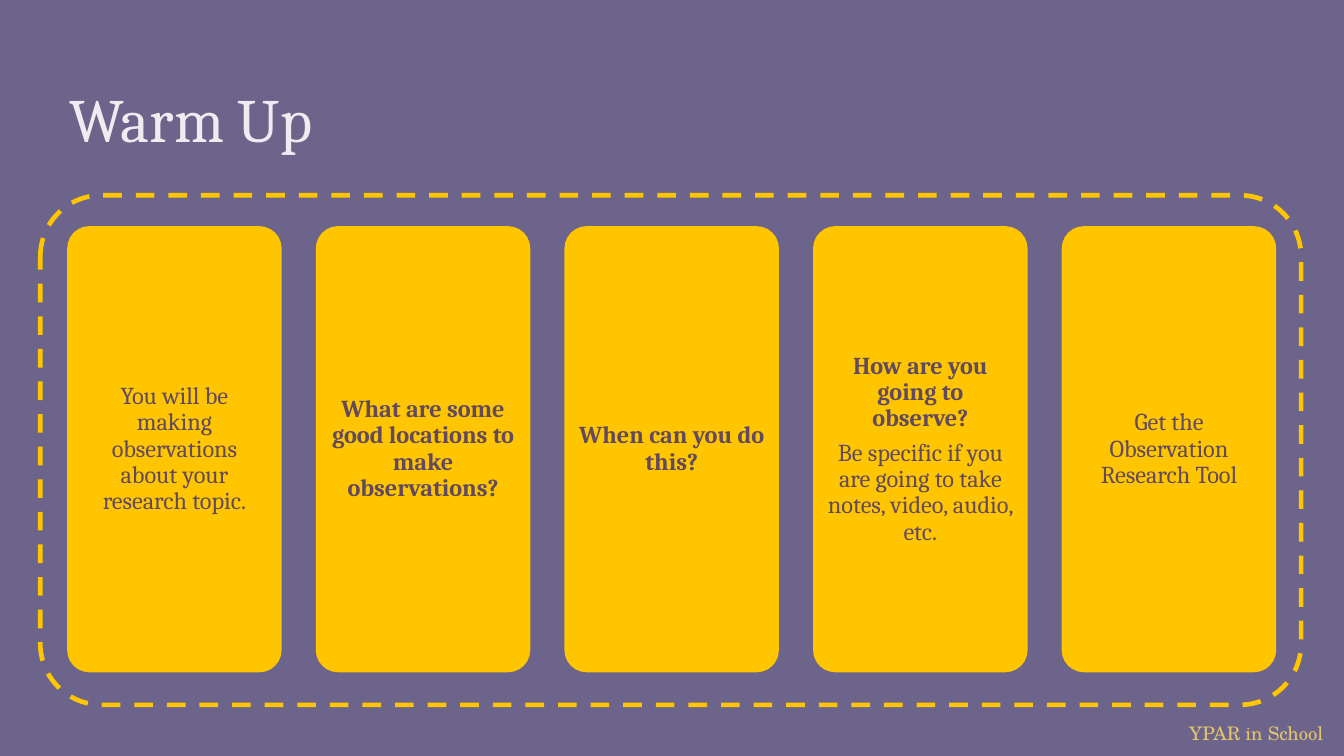
"""Build the Warm Up slide: five prompt cards inside a dashed frame."""
from dataclasses import dataclass

from pptx import Presentation
from pptx.dml.color import RGBColor
from pptx.enum import dml, shapes, text
from pptx.util import Pt


@dataclass(frozen=True)
class Theme:
    background: str = "6C648B"
    gold: str = "FFC600"
    title: str = "F0EBF0"
    body: str = "61495F"
    footer: str = "E4C469"
    font: str = "Cambria"
    footer_font: str = "TeX Gyre Schola"
    title_size: float = 33
    body_size: float = 13
    footer_size: float = 10


theme = Theme()


def style(para, font, size, color, bold=False):
    for span in para.runs:
        span.font.name = font
        span.font.size = Pt(size)
        span.font.bold = bold
        span.font.color.rgb = RGBColor.from_string(color)


def rounded_box(left, top, width, height, corner, weight):
    box = page.shapes.add_shape(
        shapes.MSO_SHAPE.ROUNDED_RECTANGLE, Pt(left), Pt(top), Pt(width), Pt(height)
    )
    box.adjustments[0] = corner
    box.shadow.inherit = False
    box.line.color.rgb = RGBColor.from_string(theme.gold)
    box.line.width = Pt(weight)
    return box


deck = Presentation()
deck.slide_width, deck.slide_height = Pt(720), Pt(405)
page = deck.slides.add_slide(deck.slide_layouts[5])
page.background.fill.solid()
page.background.fill.fore_color.rgb = RGBColor.from_string(theme.background)

footer = page.shapes.add_textbox(Pt(630), Pt(383), Pt(90), Pt(19.4))
footer.text_frame.text = "YPAR in School"
style(footer.text_frame.paragraphs[0], theme.footer_font, theme.footer_size, theme.footer)

title = page.shapes.title
title.left, title.top, title.width, title.height = Pt(30.2), Pt(36), Pt(658.8), Pt(54)
frame = title.text_frame
frame.text = "Warm Up"
frame.vertical_anchor = text.MSO_ANCHOR.BOTTOM
frame.margin_left = frame.margin_right = frame.margin_top = frame.margin_bottom = Pt(7.2)
frame.paragraphs[0].alignment = text.PP_ALIGN.LEFT
style(frame.paragraphs[0], theme.font, theme.title_size, theme.title)

cards = [
    [("You will be making observations about your research topic.", False)],
    [("What are some good locations to make observations?", True)],
    [("When can you do this?", True)],
    [
        ("How are you going to observe?", True),
        ("Be specific if you are going to take notes, video, audio, etc.", False),
    ],
    [("Get the Observation Research Tool", False)],
]
card_left, card_step = 36.5, 133.2

for column, prompts in enumerate(cards):
    card = rounded_box(card_left + column * card_step, 121.7, 113.9, 238, 0.1, 1)
    card.fill.solid()
    card.fill.fore_color.rgb = RGBColor.from_string(theme.gold)
    frame = card.text_frame
    frame.word_wrap = True
    frame.vertical_anchor = text.MSO_ANCHOR.MIDDLE
    frame.margin_left = frame.margin_right = frame.margin_top = frame.margin_bottom = Pt(3.6)
    frame.text = "\n".join(prompt for prompt, bold in prompts)
    for para, (prompt, bold) in zip(frame.paragraphs, prompts):
        para.alignment = text.PP_ALIGN.CENTER
        para.line_spacing = 0.9
        para.space_after = Pt(4.5)
        style(para, theme.font, theme.body_size, theme.body, bold)

border = rounded_box(21.6, 104.6, 675.4, 273, 0.12, 2.5)
border.fill.background()
border.line.dash_style = dml.MSO_LINE.DASH

deck.save("out.pptx")
